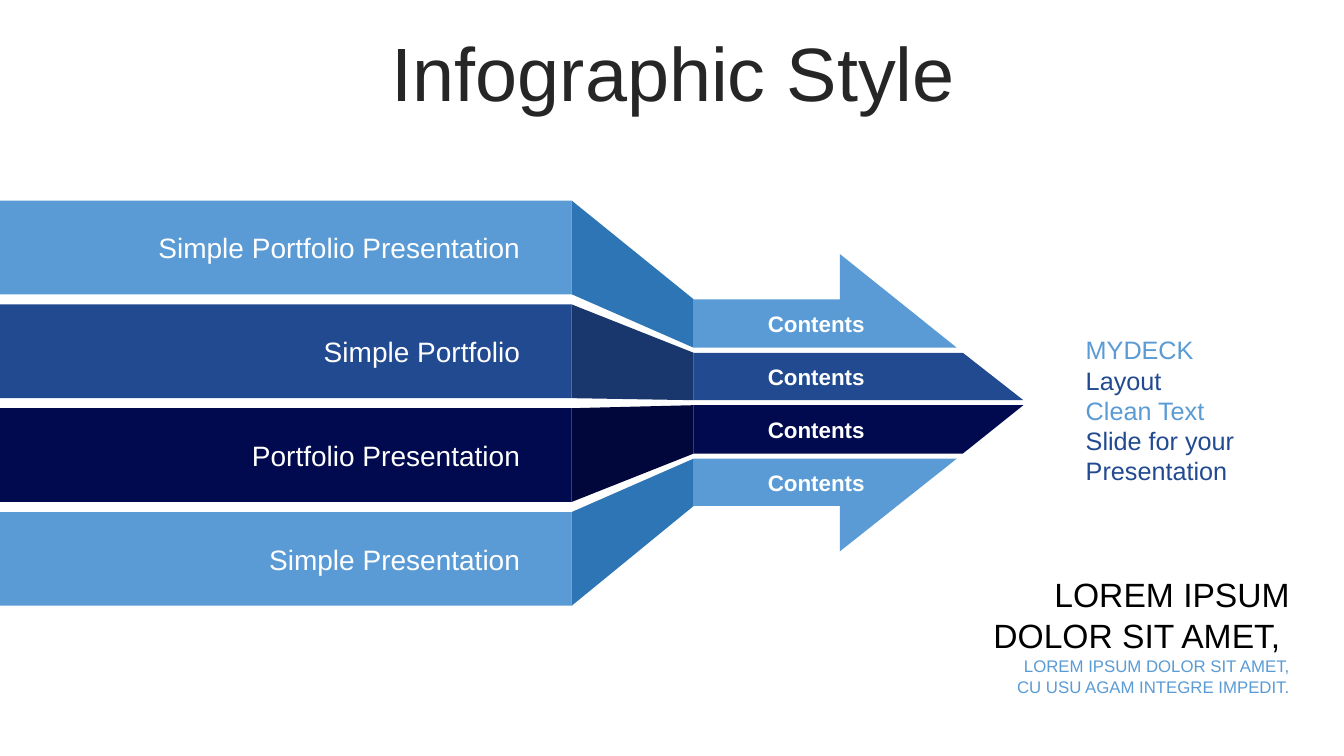
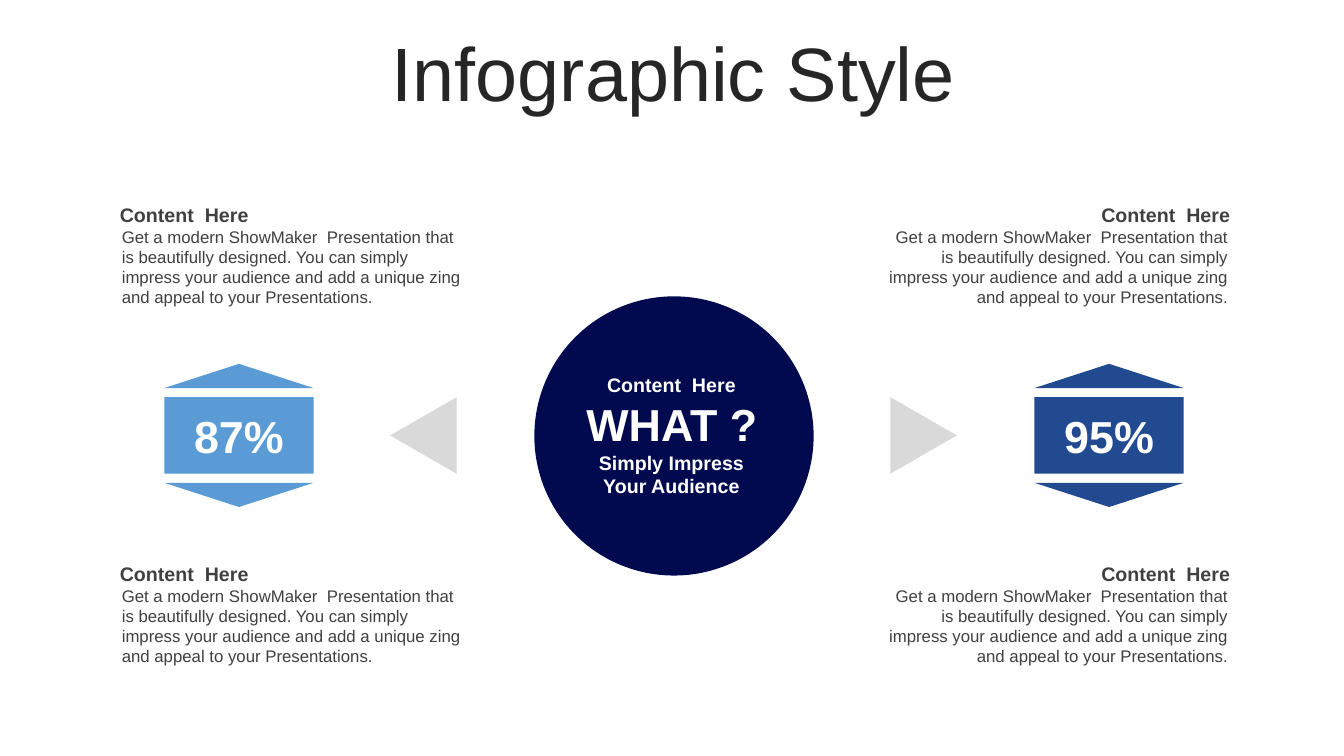
"""Build two infographic slides: a four-band arrow and a two-sided question."""
import pptx
import pptx.util
import pptx.dml.color
import pptx.enum.shapes
import pptx.enum.text

Inches = pptx.util.Inches
ALIGN = pptx.enum.text.PP_ALIGN
ANCHOR = pptx.enum.text.MSO_ANCHOR
SHAPE = pptx.enum.shapes.MSO_SHAPE

FONT = "Arial"
TITLE = "Infographic Style"
COLORS = {
    "sky": "5A9BD5", "sky_shade": "2E75B5",
    "blue": "224A90", "blue_shade": "19376C",
    "navy": "010A4F", "navy_shade": "01073B",
    "title": "262626", "body": "404040", "gray": "D9D9D9",
    "white": "FFFFFF", "black": "000000",
}

BAND_TOP, BAND_PITCH, BAND_HEIGHT, BAND_RIGHT = 1.99, 1.03, 0.93, 5.67
STRIP_LEFT = 6.88
BANDS = [
    ("Simple Portfolio Presentation", "sky", (2.97, 3.45),
     [(8.33, 2.97), (8.33, 2.52), (9.49, 3.45)]),
    ("Simple Portfolio", "blue", (3.5, 3.97), [(9.55, 3.5), (10.15, 3.97)]),
    ("Portfolio Presentation", "navy", (4.02, 4.5), [(10.15, 4.02), (9.55, 4.5)]),
    ("Simple Presentation", "sky", (4.55, 5.02),
     [(9.49, 4.55), (8.33, 5.47), (8.33, 5.02)]),
]
STRIP_LABEL = "Contents"
ARROW_NOTES = [
    ((9.34, 6.46, 3.55, 0.5), 12, ALIGN.RIGHT,
     [[("LOREM IPSUM DOLOR SIT AMET,", "sky")],
      [("CU USU AGAM INTEGRE IMPEDIT.", "sky")]]),
    ((9.34, 5.64, 3.55, 0.91), 24, ALIGN.RIGHT,
     [[("LOREM IPSUM", "black")], [("DOLOR SIT AMET, ", "black")]]),
    ((10.67, 3.26, 1.89, 1.62), 18, ALIGN.LEFT,
     [[("MYDECK", "sky"), (" Layout", "blue")],
      [("Clean Text ", "sky"), ("Slide for your Presentation", "blue")]]),
]

HEADING = "Content  Here"
DESCRIPTION = ("Get a modern ShowMaker  Presentation that is beautifully designed. "
               "You can simply impress your audience and add a unique zing and "
               "appeal to your Presentations.")
MIDDLE_Y = 4.32
BADGE_WIDTH, BADGE_HEIGHT, CAP_HEIGHT, CAP_GAP = 1.48, 0.76, 0.24, 0.09
NOTE_TOPS = (1.96, 5.52)
NOTE_WIDTH = 3.6
SIDES = [
    {"value": "87%", "color": "sky", "badge_x": 2.37, "pointer_x": 4.2,
     "rotation": 270, "align": ALIGN.LEFT, "heading_x": 1.09, "text_x": 1.11},
    {"value": "95%", "color": "blue", "badge_x": 11.0, "pointer_x": 9.16,
     "rotation": 90, "align": ALIGN.RIGHT, "heading_x": 8.7, "text_x": 8.68},
]
CIRCLE_TEXTS = [
    ((5.46, 3.88, 2.41, 0.64), 32, ["WHAT ?"]),
    ((5.56, 3.65, 2.2, 0.34), 14, [HEADING]),
    ((5.56, 4.42, 2.2, 0.57), 14, ["Simply Impress", "Your Audience"]),
]


def rgb(name):
    return pptx.dml.color.RGBColor.from_string(COLORS[name])


def write(shape, paragraphs, size, align, bold=False, anchor=ANCHOR.MIDDLE):
    """Fill a shape with paragraphs, each a list of (text, color) runs."""
    frame = shape.text_frame
    frame.word_wrap = True
    frame.auto_size = pptx.enum.text.MSO_AUTO_SIZE.NONE
    frame.vertical_anchor = anchor
    for index, runs in enumerate(paragraphs):
        paragraph = frame.add_paragraph() if index else frame.paragraphs[0]
        paragraph.alignment = align
        for text, color in runs:
            run = paragraph.add_run()
            run.text = text
            run.font.name = FONT
            run.font.size = pptx.util.Pt(size)
            run.font.bold = bold
            run.font.color.rgb = rgb(color)


def add_text(slide, box, paragraphs, size, align, **style):
    textbox = slide.shapes.add_textbox(*map(Inches, box))
    write(textbox, paragraphs, size, align, **style)


def paint(shape, color):
    shape.shadow.inherit = False
    shape.fill.solid()
    shape.fill.fore_color.rgb = rgb(color)
    shape.line.fill.background()
    return shape


def add_shape(slide, kind, box, color, rotation=0):
    shape = slide.shapes.add_shape(kind, *map(Inches, box))
    shape.rotation = rotation
    return paint(shape, color)


def add_polygon(slide, points, color):
    start, *rest = [(Inches(x), Inches(y)) for x, y in points]
    builder = slide.shapes.build_freeform(*start)
    builder.add_line_segments(rest, close=True)
    return paint(builder.convert_to_shape(), color)


def add_titled_slide(presentation):
    slide = presentation.slides.add_slide(presentation.slide_layouts[5])
    title = slide.shapes.title
    title.left, title.top, title.width, title.height = map(Inches, (0.35, 0.37, 12.66, 0.79))
    write(title, [[(TITLE, "title")]], 54, ALIGN.CENTER)
    paragraph = title.text_frame.paragraphs[0]
    paragraph.line_spacing = 0.9
    paragraph.space_before = pptx.util.Pt(10)
    return slide


def build_arrow_slide(presentation):
    slide = add_titled_slide(presentation)
    for index, (label, color, (strip_top, strip_bottom), nose) in enumerate(BANDS):
        top = BAND_TOP + index * BAND_PITCH
        bottom = top + BAND_HEIGHT
        add_polygon(slide, [(STRIP_LEFT, strip_top), *nose, (STRIP_LEFT, strip_bottom)], color)
        band = add_shape(slide, SHAPE.RECTANGLE, (0, top, BAND_RIGHT, BAND_HEIGHT), color)
        write(band, [[(label, "white")]], 20, ALIGN.RIGHT)
        band.text_frame.margin_right = Inches(0.51)
        add_polygon(slide, [(BAND_RIGHT, top), (STRIP_LEFT, strip_top),
                            (STRIP_LEFT, strip_bottom), (BAND_RIGHT, bottom)],
                    color + "_shade")
        label_top = (strip_top + strip_bottom - 0.37) / 2
        add_text(slide, (7.44, label_top, 1.31, 0.37), [[(STRIP_LABEL, "white")]],
                 16, ALIGN.CENTER, bold=True)
    for box, size, align, paragraphs in ARROW_NOTES:
        add_text(slide, box, paragraphs, size, align)


def add_badge(slide, side):
    left = side["badge_x"] - BADGE_WIDTH / 2
    top = MIDDLE_Y - BADGE_HEIGHT / 2
    badge = add_shape(slide, SHAPE.RECTANGLE, (left, top, BADGE_WIDTH, BADGE_HEIGHT),
                      side["color"])
    write(badge, [[(side["value"], "white")]], 32, ALIGN.CENTER, bold=True)
    for cap_top, rotation in ((top - CAP_GAP - CAP_HEIGHT, 0),
                              (top + BADGE_HEIGHT + CAP_GAP, 180)):
        add_shape(slide, SHAPE.ISOSCELES_TRIANGLE, (left, cap_top, BADGE_WIDTH, CAP_HEIGHT),
                  side["color"], rotation)


def build_question_slide(presentation):
    slide = add_titled_slide(presentation)
    add_shape(slide, SHAPE.OVAL, (5.3, 2.94, 2.77, 2.77), "navy")
    for side in SIDES:
        add_shape(slide, SHAPE.ISOSCELES_TRIANGLE,
                  (side["pointer_x"] - 0.38, MIDDLE_Y - 0.33, 0.76, 0.66),
                  "gray", side["rotation"])
        add_badge(slide, side)
        for top in NOTE_TOPS:
            add_text(slide, (side["heading_x"], top, NOTE_WIDTH, 0.34),
                     [[(HEADING, "body")]], 14, side["align"], bold=True)
            add_text(slide, (side["text_x"], top + 0.24, NOTE_WIDTH, 0.91),
                     [[(DESCRIPTION, "body")]], 12, side["align"], anchor=ANCHOR.TOP)
    for box, size, lines in CIRCLE_TEXTS:
        add_text(slide, box, [[(line, "white")] for line in lines], size,
                 ALIGN.CENTER, bold=True)


def main():
    presentation = pptx.Presentation()
    presentation.slide_width = Inches(13.33)
    presentation.slide_height = Inches(7.5)
    build_arrow_slide(presentation)
    build_question_slide(presentation)
    presentation.save("out.pptx")


if __name__ == "__main__":
    main()
